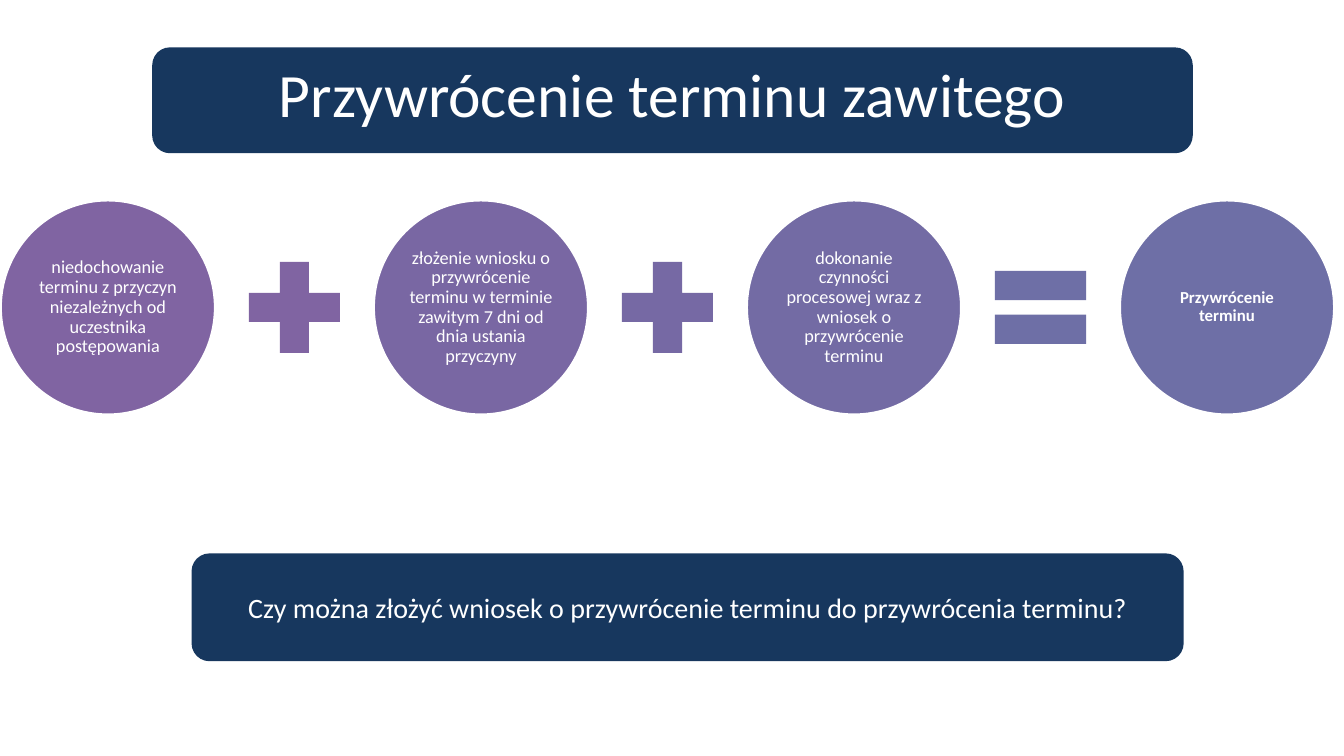
import pptx
import pptx.util
import pptx.dml.color
import pptx.enum.shapes
import pptx.enum.text

Inches = pptx.util.Inches
Pt = pptx.util.Pt
RGBColor = pptx.dml.color.RGBColor
SHAPE = pptx.enum.shapes.MSO_SHAPE

NAVY = RGBColor(0x17, 0x37, 0x5E)
WHITE = RGBColor(0xFF, 0xFF, 0xFF)
PURPLE = RGBColor(0x80, 0x64, 0xA2)
VIOLET = RGBColor(0x79, 0x67, 0xA3)
MID_VIOLET = RGBColor(0x76, 0x69, 0xA4)
LAVENDER = RGBColor(0x73, 0x6B, 0xA4)
PERIWINKLE = RGBColor(0x6E, 0x6F, 0xA6)

TITLE = "Przywrócenie terminu zawitego"
QUESTION = "Czy można złożyć wniosek o przywrócenie terminu do przywrócenia terminu?"
CONDITIONS = [
    ("niedochowanie terminu z przyczyn niezależnych od uczestnika postępowania", PURPLE, 13, False),
    ("złożenie wniosku o przywrócenie terminu w terminie zawitym 7 dni od dnia ustania przyczyny",
     VIOLET, 13, False),
    ("dokonanie czynności procesowej wraz z wniosek o przywrócenie terminu", LAVENDER, 13, False),
    ("Przywrócenie terminu", PERIWINKLE, 12, True),
]
OPERATORS = [
    (SHAPE.MATH_PLUS, PURPLE),
    (SHAPE.MATH_PLUS, MID_VIOLET),
    (SHAPE.MATH_EQUAL, PERIWINKLE),
]

WIDTH, HEIGHT = 13.33, 7.5
EQUATION_LEFT, EQUATION_MIDDLE = 0.01, 3.05
CIRCLE, OPERATOR, PITCH = 2.12, 1.23, 3.7
GAP = (PITCH - CIRCLE - OPERATOR) / 2

presentation = pptx.Presentation()
presentation.slide_width = Inches(WIDTH)
presentation.slide_height = Inches(HEIGHT)
slide = presentation.slides.add_slide(presentation.slide_layouts[6])


def add_filled(kind, left, top, width, height, color):
    shape = slide.shapes.add_shape(kind, Inches(left), Inches(top), Inches(width), Inches(height))
    shape.shadow.inherit = False
    shape.fill.solid()
    shape.fill.fore_color.rgb = color
    shape.line.fill.background()
    return shape


def write(shape, text, size, bold=False):
    frame = shape.text_frame
    frame.word_wrap = True
    frame.vertical_anchor = pptx.enum.text.MSO_ANCHOR.MIDDLE
    frame.text = text
    paragraph = frame.paragraphs[0]
    paragraph.alignment = pptx.enum.text.PP_ALIGN.CENTER
    font = paragraph.runs[0].font
    font.name = "Calibri"
    font.size = Pt(size)
    font.bold = bold
    font.color.rgb = WHITE
    return frame


add_filled(SHAPE.ROUNDED_RECTANGLE, 1.51, 0.47, 10.32, 1.05, NAVY)
title = slide.shapes.add_textbox(Inches(0.67), Inches(0.3), Inches(12), Inches(1.25))
write(title, TITLE, 44)

for column, (condition, color, size, bold) in enumerate(CONDITIONS):
    left = EQUATION_LEFT + column * PITCH
    circle = add_filled(SHAPE.OVAL, left, EQUATION_MIDDLE - CIRCLE / 2, CIRCLE, CIRCLE, color)
    circle.line.color.rgb = WHITE
    circle.line.width = Pt(1.25)
    frame = write(circle, condition, size, bold)
    frame.margin_left = frame.margin_right = Inches(0.02)
    frame.margin_top = frame.margin_bottom = Inches(0.02)
    frame.paragraphs[0].line_spacing = 0.9

for column, (kind, color) in enumerate(OPERATORS):
    left = EQUATION_LEFT + column * PITCH + CIRCLE + GAP
    add_filled(kind, left, EQUATION_MIDDLE - OPERATOR / 2, OPERATOR, OPERATOR, color)

question = add_filled(SHAPE.ROUNDED_RECTANGLE, 1.9, 5.49, 9.84, 1.07, NAVY)
write(question, QUESTION, 20)

presentation.save("out.pptx")
